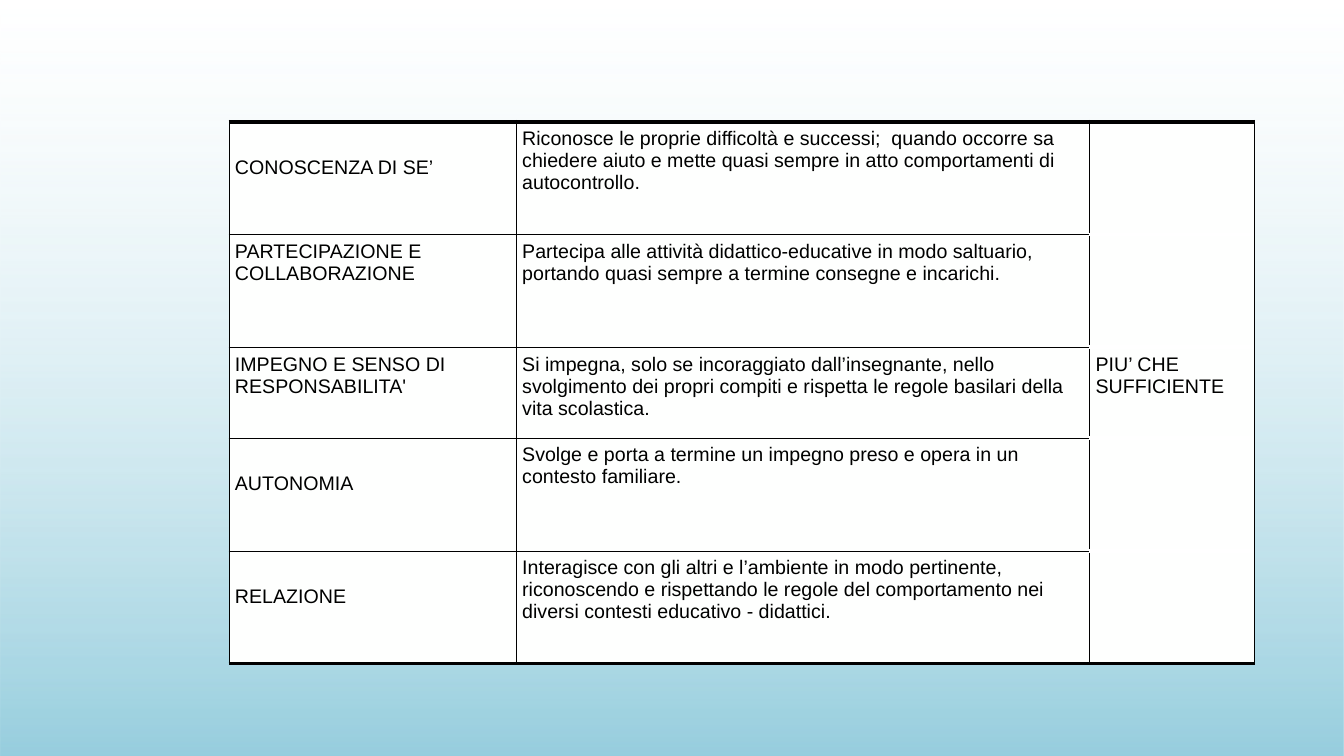
from dataclasses import dataclass

from lxml.etree import SubElement
from pptx import Presentation
from pptx.dml.color import RGBColor as Rgb
from pptx.enum.shapes import MSO_SHAPE as Shape
from pptx.oxml.ns import qn
from pptx.util import Cm, Pt


@dataclass(frozen=True)
class Theme:
    font: str = "Arial"
    text_size: float = 14
    ink: str = "000000"
    cell: str = "FEFFFE"
    gap: str = "FFFFFF"
    thin: float = 0.5
    thick: float = 3
    sky_low: str = "7DC2D6"
    sky_high: str = "D4EBF1"


CRITERIA = [
    ("CONOSCENZA DI SE’",
     "Riconosce le proprie difficoltà e successi;  quando occorre sa chiedere aiuto "
     "e mette quasi sempre in atto comportamenti di autocontrollo."),
    ("PARTECIPAZIONE E COLLABORAZIONE",
     "Partecipa alle attività didattico-educative in modo saltuario, portando quasi "
     "sempre a termine consegne e incarichi."),
    ("IMPEGNO E SENSO DI RESPONSABILITA'",
     "Si impegna, solo se incoraggiato dall’insegnante, nello svolgimento dei propri "
     "compiti e rispetta le regole basilari della vita scolastica."),
    ("AUTONOMIA",
     "Svolge e porta a termine un impegno preso e opera in un contesto familiare."),
    ("RELAZIONE",
     "Interagisce con gli altri e l’ambiente in modo pertinente, riconoscendo e "
     "rispettando le regole del comportamento nei diversi contesti educativo - didattici."),
]
GRADE = "PIU’ CHE SUFFICIENTE"
GRADE_ROW = 2
LOWERED_ROWS = (0, 3, 4)
COLUMN_WIDTHS = (7.24, 14.45, 4.14)
ROW_HEIGHTS = (2.84, 2.84, 2.29, 2.84, 2.84)
MARGIN = 0.15
LOWERED_MARGIN = 0.88


class RubricSlide:
    def __init__(self, deck, theme):
        self.theme = theme
        self.width, self.height = deck.slide_width, deck.slide_height
        self.slide = deck.slides.add_slide(deck.slide_layouts[6])

    def backdrop(self):
        sky = self.slide.shapes.add_shape(Shape.RECTANGLE, 0, 0, self.width, self.height)
        sky.shadow.inherit = False
        sky.line.fill.background()
        sky.fill.gradient()
        sky.fill.gradient_angle = 90
        low, high = sky.fill.gradient_stops
        low.position, high.position = 0, 0.99
        low.color.rgb = Rgb.from_string(self.theme.sky_low)
        high.color.rgb = Rgb.from_string(self.theme.sky_high)
        for color, opacity in zip(sky._element.spPr.iter(qn("a:srgbClr")), (80, 0)):
            SubElement(color, qn("a:alpha"), val=str(opacity * 1000))

    def border(self, cell, side, color, width):
        line = SubElement(cell._tc.get_or_add_tcPr(), qn(f"a:ln{side}"), w=str(Pt(width)))
        fill = SubElement(line, qn("a:solidFill"))
        SubElement(fill, qn("a:srgbClr"), val=color)

    def cell(self, cell, text, top_edge, bottom_edge, top_margin):
        theme = self.theme
        cell.margin_left = cell.margin_right = cell.margin_bottom = Cm(MARGIN)
        cell.margin_top = Cm(top_margin)
        side_edge = (theme.ink, theme.thin)
        for side, edge in zip("LRTB", (side_edge, side_edge, top_edge, bottom_edge)):
            self.border(cell, side, *edge)
        cell.fill.solid()
        cell.fill.fore_color.rgb = Rgb.from_string(theme.cell)
        if text:
            run = cell.text_frame.paragraphs[0].add_run()
            run.text = text
            run.font.name = theme.font
            run.font.size = Pt(theme.text_size)
            run.font.color.rgb = Rgb.from_string(theme.ink)

    def rubric(self, left, top):
        theme = self.theme
        table = self.slide.shapes.add_table(
            len(CRITERIA), len(COLUMN_WIDTHS), Cm(left), Cm(top),
            Cm(sum(COLUMN_WIDTHS)), Cm(sum(ROW_HEIGHTS))).table
        table.first_row = table.horz_banding = False
        for column, width in zip(table.columns, COLUMN_WIDTHS):
            column.width = Cm(width)
        for row, height in zip(table.rows, ROW_HEIGHTS):
            row.height = Cm(height)

        outer = (theme.ink, theme.thick)
        last = len(CRITERIA) - 1
        for r, (criterion, description) in enumerate(CRITERIA):
            grade = GRADE if r == GRADE_ROW else ""
            for c, text in enumerate((criterion, description, grade)):
                inner = (theme.gap, theme.thick) if c == 2 else (theme.ink, theme.thin)
                lowered = c == 0 and r in LOWERED_ROWS
                self.cell(table.cell(r, c), text,
                          outer if r == 0 else inner,
                          outer if r == last else inner,
                          LOWERED_MARGIN if lowered else MARGIN)


def main():
    deck = Presentation()
    deck.slide_width, deck.slide_height = Cm(33.87), Cm(19.05)
    page = RubricSlide(deck, Theme())
    page.backdrop()
    page.rubric(5.77, 3.07)
    deck.save("out.pptx")


if __name__ == "__main__":
    main()
